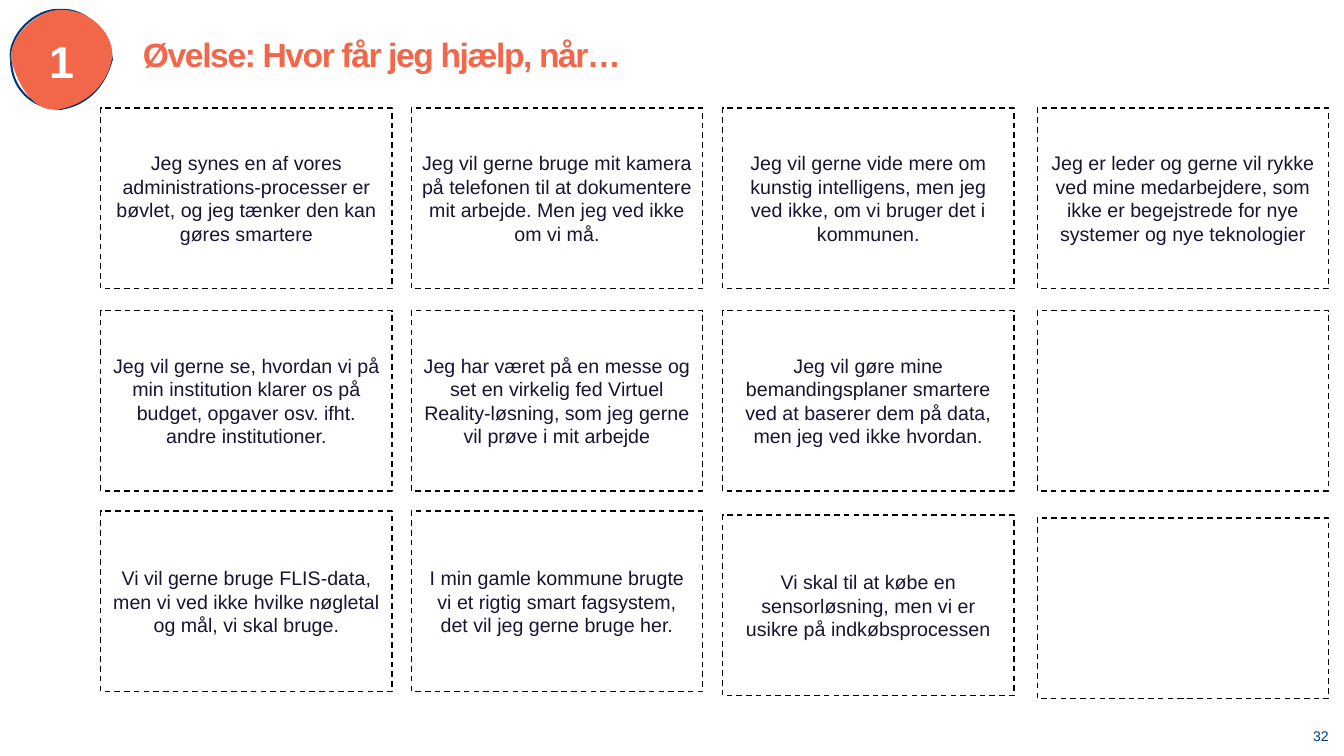
import pptx
import pptx.dml.color
import pptx.enum.dml
import pptx.enum.shapes
import pptx.enum.text
import pptx.util
from dataclasses import dataclass

Pt = pptx.util.Pt
RGB = pptx.dml.color.RGBColor.from_string
ALIGN = pptx.enum.text.PP_ALIGN
ANCHOR = pptx.enum.text.MSO_ANCHOR


@dataclass(frozen=True)
class Theme:
    """Colours, font and type sizes of the slide."""
    coral: str = "F26749"
    navy: str = "003B7A"
    ink: str = "181532"
    black: str = "000000"
    white: str = "FFFFFF"
    font: str = "Arial"
    badge: int = 32
    title: int = 24
    card: int = 14
    number: int = 10


THEME = Theme()

COLUMNS = (72, 293.8, 516.2, 740.9)
ROWS = (77.2, 221.8, 365)
CARD_SIZE = (208.1, 128.9)
LAST_ROW_DROP = (0, 0, 3, 5)

CARDS = (
    ("Jeg synes en af vores administrations-processer er bøvlet, og jeg tænker den kan gøres smartere",
     "Jeg vil gerne bruge mit kamera på telefonen til at dokumentere mit arbejde. Men jeg ved ikke om vi må.",
     "Jeg vil gerne vide mere om kunstig intelligens, men jeg ved ikke, om vi bruger det i kommunen.",
     "Jeg er leder og gerne vil rykke ved mine medarbejdere, som ikke er begejstrede for nye systemer og nye teknologier"),
    ("Jeg vil gerne se, hvordan vi på min institution klarer os på budget, opgaver osv. ifht. andre institutioner.",
     "Jeg har været på en messe og set en virkelig fed Virtuel Reality-løsning, som jeg gerne vil prøve i mit arbejde",
     "Jeg vil gøre mine bemandingsplaner smartere ved at baserer dem på data, men jeg ved ikke hvordan.",
     ""),
    ("Vi vil gerne bruge FLIS-data, men vi ved ikke hvilke nøgletal og mål, vi skal bruge.",
     "I min gamle kommune brugte vi et rigtig smart fagsystem, det vil jeg gerne bruge her.",
     "Vi skal til at købe en sensorløsning, men vi er usikre på indkøbsprocessen",
     ""),
)

BLOB_START = (0, 49)
OUTLINE_CURVES = ((-4, 27, 24, -3, 50, 0), (75, -2, 98, 24, 100, 49),
                  (94, 72, 79, 93, 50, 98), (20, 98, 0, 77, 0, 49))
FILL_CURVES = ((-3, 27, 28, -2, 50, 0), (80, -1, 104, 26, 100, 49),
               (96, 71, 78, 92, 50, 98), (23, 104, 7, 75, 0, 49))


def apply(target, values):
    """Set every attribute named in values on target."""
    for name, value in values.items():
        setattr(target, name, value)


def write(shape, text, size, color, bold=False, frame=None, para=None):
    """Put one formatted paragraph in a shape and return its run."""
    tf = shape.text_frame
    apply(tf, {"word_wrap": True, **(frame or {})})
    p = tf.paragraphs[0]
    apply(p, para or {})
    r = p.add_run()
    r.text = text
    apply(r.font, {"name": THEME.font, "size": Pt(size), "bold": bold})
    r.font.color.rgb = RGB(color)
    return r


def text_box(s, box):
    """Add a text box at a box given in points."""
    return s.shapes.add_textbox(*map(Pt, box))


def curve_points(start, curves, steps=16):
    """Return points along a chain of cubic curves."""
    points, (x0, y0) = [], start
    for x1, y1, x2, y2, x3, y3 in curves:
        for i in range(1, steps + 1):
            t = i / steps
            u = 1 - t
            a, b, c, d = u ** 3, 3 * u * u * t, 3 * u * t * t, t ** 3
            points.append((a * x0 + b * x1 + c * x2 + d * x3,
                           a * y0 + b * y1 + c * y2 + d * y3))
        x0, y0 = x3, y3
    return points


def blob(s, box, curves):
    """Add a closed blob whose curves are in percent of the box width."""
    left, top, width = box[:3]

    def place(x, y):
        return Pt(left + x * width / 100), Pt(top + y * width / 100)

    builder = s.shapes.build_freeform(*place(*BLOB_START), scale=1.0)
    builder.add_line_segments([place(x, y) for x, y in curve_points(BLOB_START, curves)], close=True)
    sp = builder.convert_to_shape()
    sp.shadow.inherit = False
    return sp


def add_badge(s, box, text):
    """Draw the round exercise badge with its offset outline."""
    outline = blob(s, box, OUTLINE_CURVES)
    outline.fill.background()
    outline.line.color.rgb = RGB(THEME.navy)
    outline.line.width = Pt(1.5)
    disc = blob(s, box, FILL_CURVES)
    disc.fill.solid()
    disc.fill.fore_color.rgb = RGB(THEME.coral)
    disc.line.fill.background()
    write(disc, text, THEME.badge, THEME.white, True,
          {"vertical_anchor": ANCHOR.MIDDLE},
          {"alignment": ALIGN.CENTER, "line_spacing": 1.04})


def add_title(s, box, text):
    """Write the tightly spaced slide title."""
    r = write(text_box(s, box), text, THEME.title, THEME.coral, True,
              para={"line_spacing": 1.04})
    r.font._element.set("spc", "-100")


def add_card(s, box, text):
    """Draw one dashed card with centred text, or an empty card."""
    sp = s.shapes.add_shape(pptx.enum.shapes.MSO_SHAPE.RECTANGLE, *map(Pt, box))
    sp.shadow.inherit = False
    sp.fill.solid()
    sp.fill.fore_color.rgb = RGB(THEME.white)
    sp.line.color.rgb = RGB(THEME.black)
    apply(sp.line, {"width": Pt(1), "dash_style": pptx.enum.dml.MSO_LINE.DASH})
    if text:
        write(sp, text, THEME.card, THEME.ink,
              frame={"vertical_anchor": ANCHOR.MIDDLE},
              para={"alignment": ALIGN.CENTER})


def add_cards(s):
    """Lay out the cards in columns and rows."""
    for row, (top, texts) in enumerate(zip(ROWS, CARDS)):
        for left, drop, text in zip(COLUMNS, LAST_ROW_DROP, texts):
            shift = drop if row == len(ROWS) - 1 else 0
            add_card(s, (left, top + shift, *CARD_SIZE), text)


def add_page_number(s, box, text):
    """Write the page number at the lower right."""
    margins = {f"margin_{side}": 0 for side in ("left", "top", "right", "bottom")}
    write(text_box(s, box), text, THEME.number, THEME.navy,
          frame={"vertical_anchor": ANCHOR.BOTTOM, **margins},
          para={"alignment": ALIGN.RIGHT})


def main():
    """Build the exercise slide and save it."""
    prs = pptx.Presentation()
    apply(prs, {"slide_width": Pt(960), "slide_height": Pt(540)})
    s = prs.slides.add_slide(prs.slide_layouts[6])
    add_badge(s, (7.9, 7.2, 72, 70.6), "1")
    add_title(s, (95, 19.4, 581.8, 40.3), "Øvelse: Hvor får jeg hjælp, når…")
    add_cards(s)
    add_page_number(s, (905, 496.8, 44, 34.6), "32")
    prs.save("out.pptx")


if __name__ == "__main__":
    main()
